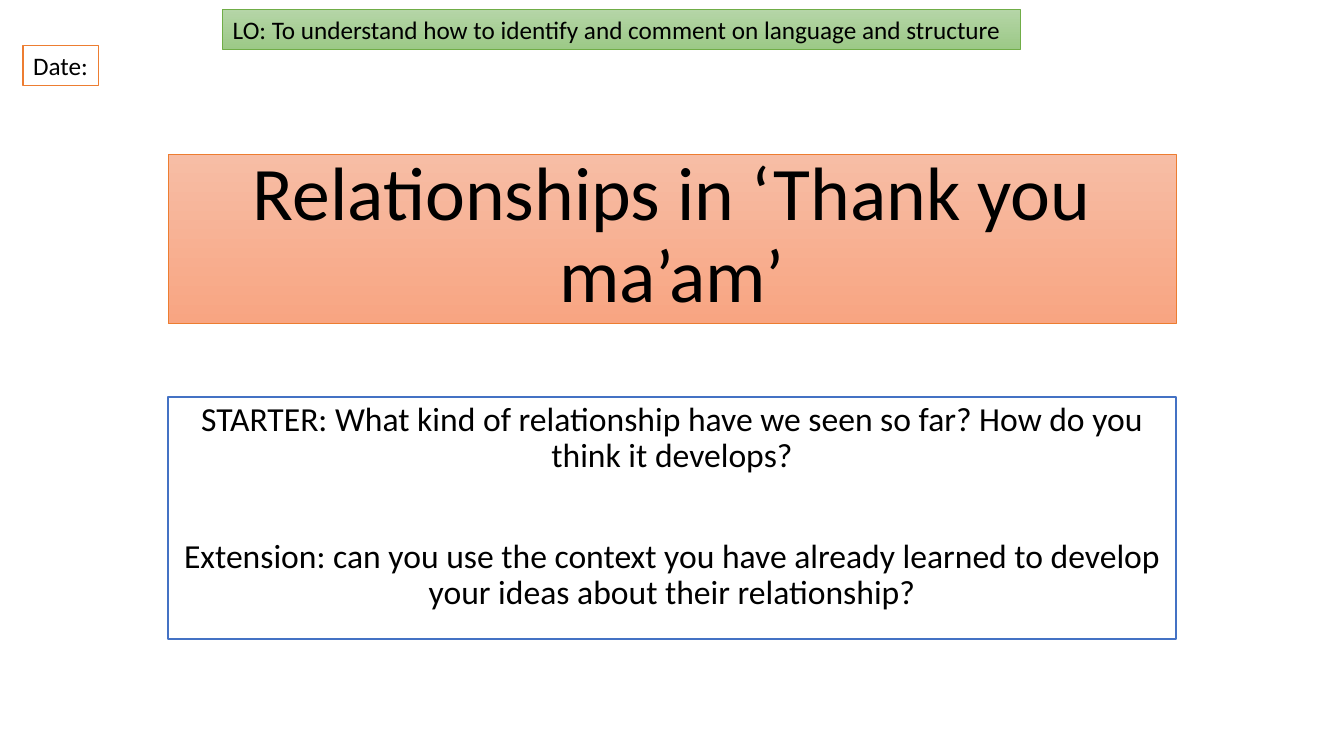
import pptx
import pptx.util
import pptx.dml.color
import pptx.enum.text

RGBColor = pptx.dml.color.RGBColor
Inches = pptx.util.Inches
Pt = pptx.util.Pt
PP_ALIGN = pptx.enum.text.PP_ALIGN
MSO_ANCHOR = pptx.enum.text.MSO_ANCHOR
MSO_AUTO_SIZE = pptx.enum.text.MSO_AUTO_SIZE

BLACK = RGBColor(0x00, 0x00, 0x00)
WHITE = RGBColor(0xFF, 0xFF, 0xFF)
ORANGE = RGBColor(0xED, 0x7D, 0x31)
BLUE = RGBColor(0x44, 0x72, 0xC4)
GREEN = RGBColor(0x70, 0xAD, 0x47)
PEACH = (RGBColor(0xF7, 0xBD, 0xA5), RGBColor(0xF8, 0xA5, 0x82))
LEAF = (RGBColor(0xB5, 0xD5, 0xA7), RGBColor(0x9C, 0xC9, 0x87))

SLIDE_WIDTH, SLIDE_HEIGHT = 13.33, 7.5
MAIN_WIDTH = 0.75 * SLIDE_WIDTH
MAIN_LEFT = (SLIDE_WIDTH - MAIN_WIDTH) / 2
LABEL_HEIGHT = 0.4


def paint(panel, border, width, shades=None):
    """Fill a panel with white or a downward gradient and outline it."""
    if shades:
        panel.fill.gradient()
        panel.fill.gradient_angle = 270
        for stop, shade in zip(panel.fill.gradient_stops, shades):
            stop.color.rgb = shade
    else:
        panel.fill.solid()
        panel.fill.fore_color.rgb = WHITE
    panel.line.color.rgb = border
    panel.line.width = Pt(width)


def write(frame, lines, size, align=PP_ALIGN.LEFT, spacing=1.0, gap=0):
    """Write paragraphs with a shared style and a gap between them."""
    frame.text = "\n".join(lines)
    for position, paragraph in enumerate(frame.paragraphs):
        paragraph.alignment = align
        paragraph.line_spacing = spacing
        paragraph.space_before = Pt(gap if position else 0)
        paragraph.font.name = "Calibri"
        paragraph.font.size = Pt(size)
        paragraph.font.color.rgb = BLACK


def add_heading(slide, box):
    """Place the lesson title in its shaded banner."""
    heading = slide.shapes.title
    heading.left, heading.top, heading.width, heading.height = map(Inches, box)
    paint(heading, ORANGE, 0.5, PEACH)
    frame = heading.text_frame
    frame.auto_size = MSO_AUTO_SIZE.NONE
    frame.vertical_anchor = MSO_ANCHOR.BOTTOM
    write(frame, ["Relationships in ‘Thank you ma’am’"], 54, PP_ALIGN.CENTER, 0.9)


def add_tasks(slide, box):
    """Place the starter and extension questions."""
    tasks = slide.shapes.add_textbox(*map(Inches, box))
    paint(tasks, BLUE, 1)
    tasks.text_frame.word_wrap = True
    questions = [
        "STARTER: What kind of relationship have we seen so far? "
        "How do you think it develops?",
        "Extension: can you use the context you have already learned "
        "to develop your ideas about their relationship?",
    ]
    write(tasks.text_frame, questions, 24, PP_ALIGN.CENTER, 0.9, 46)


def add_label(slide, box, wording, border, width, shades=None):
    """Place a one-line label."""
    label = slide.shapes.add_textbox(*map(Inches, box))
    paint(label, border, width, shades)
    label.text_frame.word_wrap = False
    write(label.text_frame, [wording], 18)


def main():
    """Build the lesson opening slide."""
    deck = pptx.Presentation()
    deck.slide_width = Inches(SLIDE_WIDTH)
    deck.slide_height = Inches(SLIDE_HEIGHT)
    slide = deck.slides.add_slide(deck.slide_layouts[5])
    add_heading(slide, (MAIN_LEFT, 1.53, MAIN_WIDTH, 1.68))
    add_tasks(slide, (MAIN_LEFT, 3.94, MAIN_WIDTH, 2.4))
    add_label(slide, (0.23, 0.45, 0.75, LABEL_HEIGHT), "Date:", ORANGE, 1)
    add_label(
        slide,
        (2.21, 0.09, 7.91, LABEL_HEIGHT),
        "LO: To understand how to identify and comment on language and structure",
        GREEN, 0.5, LEAF,
    )
    deck.save("out.pptx")


if __name__ == "__main__":
    main()
